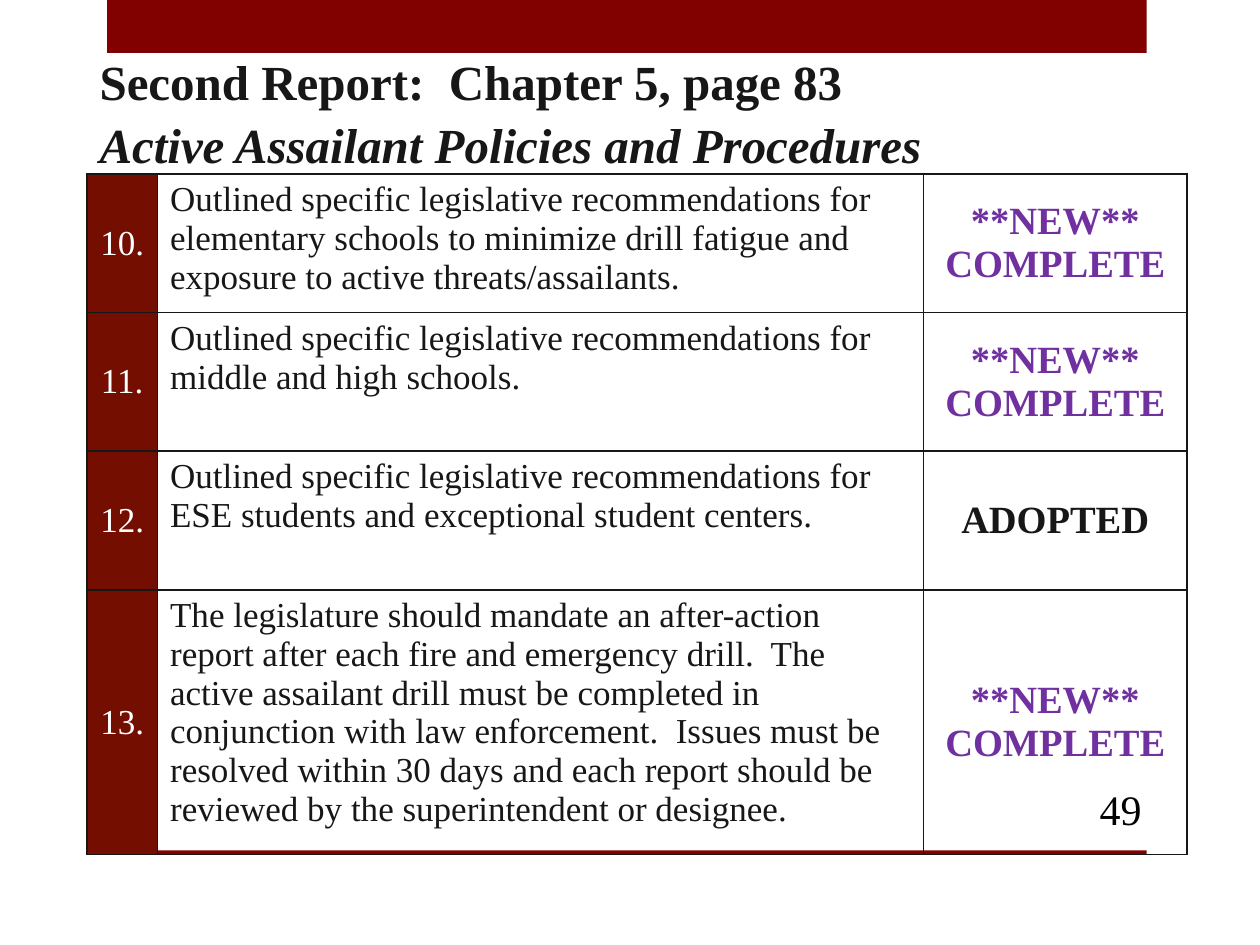
from lxml.etree import SubElement
from pptx import Presentation
from pptx.dml.color import RGBColor
from pptx.enum.shapes import MSO_SHAPE
from pptx.enum.text import MSO_ANCHOR, MSO_AUTO_SIZE, PP_ALIGN
from pptx.oxml.ns import qn
from pptx.util import Inches, Pt

# Content
TITLE_LINES = [
    ("Second Report:  Chapter 5, page 83", False),
    ("Active Assailant Policies and Procedures", True),
]
NEW = "**NEW** COMPLETE"
RECOMMENDATIONS = [
    ("10.", "Outlined specific legislative recommendations for elementary schools "
            "to minimize drill fatigue and exposure to active threats/assailants.", NEW),
    ("11.", "Outlined specific legislative recommendations for middle and high schools.", NEW),
    ("12.", "Outlined specific legislative recommendations for ESE students and "
            "exceptional student centers.", "ADOPTED"),
    ("13.", "The legislature should mandate an after-action report after each fire and "
            "emergency drill.  The active assailant drill must be completed in conjunction "
            "with law enforcement.  Issues must be resolved within 30 days and each report "
            "should be reviewed by the superintendent or designee.", NEW),
]
PAGE_NUMBER = "49"

# Theme and layout
THEME = {
    "font": "Times New Roman",
    "bar": "810000", "number_fill": "730E00", "ink": "171717",
    "white": "FFFFFF", "new": "7030A0", "page": "020202",
    "title_size": 28, "body_size": 20, "status_size": 22, "page_size": 24,
}
BARS = [(0, 0.42), (6.75, 0.03)]  # top, height
COLUMN_WIDTHS = [0.56, 6.08, 2.09]
ROW_HEIGHTS = [1.1, 1.1, 1.1, 2.1]


def color(name):
    return RGBColor.from_string(THEME[name])


def add_run(paragraph, text, size, ink, bold=False, italic=False):
    run = paragraph.add_run()
    run.text = text
    font = run.font
    font.name, font.size = THEME["font"], Pt(THEME[size])
    font.bold, font.italic = bold, italic
    font.color.rgb = color(ink)


def add_borders(cell):
    properties = cell._tc.get_or_add_tcPr()
    for index, side in enumerate(("lnL", "lnR", "lnT", "lnB")):
        line = SubElement(properties, qn(f"a:{side}"), w=str(Pt(1)))
        fill = SubElement(line, qn("a:solidFill"))
        SubElement(fill, qn("a:srgbClr"), val=THEME["ink"])
        properties.insert(index, line)  # borders precede the fill


def place(shape, left, top, width, height):
    shape.left, shape.top = Inches(left), Inches(top)
    shape.width, shape.height = Inches(width), Inches(height)


presentation = Presentation()
presentation.slide_width, presentation.slide_height = Inches(10), Inches(7.5)
slide = presentation.slides.add_slide(presentation.slide_layouts[5])

# Top and bottom bars
for top, height in BARS:
    bar = slide.shapes.add_shape(
        MSO_SHAPE.RECTANGLE, Inches(0.85), Inches(top), Inches(8.25), Inches(height))
    bar.shadow.inherit = False
    bar.fill.solid()
    bar.fill.fore_color.rgb = color("bar")
    bar.line.fill.background()

# Page number
page_box = slide.shapes.add_textbox(Inches(8.33), Inches(6.22), Inches(0.83), Inches(0.4))
page_box.text_frame.word_wrap = True
page_box.text_frame.vertical_anchor = MSO_ANCHOR.MIDDLE
page_paragraph = page_box.text_frame.paragraphs[0]
page_paragraph.alignment = PP_ALIGN.RIGHT
add_run(page_paragraph, PAGE_NUMBER, "page_size", "page")

# Title
title = slide.shapes.title
place(title, 0.69, 0.33, 8.08, 1.04)
heading = title.text_frame
heading.word_wrap = True
heading.auto_size = MSO_AUTO_SIZE.NONE
heading.vertical_anchor = MSO_ANCHOR.TOP
for index, (text, italic) in enumerate(TITLE_LINES):
    paragraph = heading.add_paragraph() if index else heading.paragraphs[0]
    paragraph.alignment = PP_ALIGN.LEFT
    paragraph.line_spacing = 1.07
    add_run(paragraph, text, "title_size", "ink", bold=True, italic=italic)

# Recommendations table
table = slide.shapes.add_table(
    len(RECOMMENDATIONS), len(COLUMN_WIDTHS), Inches(0.69), Inches(1.38),
    Inches(sum(COLUMN_WIDTHS)), Inches(sum(ROW_HEIGHTS))).table
table.first_row = table.horz_banding = False
for column, width in zip(table.columns, COLUMN_WIDTHS):
    column.width = Inches(width)
for row, height in zip(table.rows, ROW_HEIGHTS):
    row.height = Inches(height)

for row, (number, recommendation, status) in zip(table.rows, RECOMMENDATIONS):
    number_cell, text_cell, status_cell = row.cells
    for cell in row.cells:
        cell.fill.background()
    number_cell.fill.solid()
    number_cell.fill.fore_color.rgb = color("number_fill")
    for cell in (number_cell, status_cell):
        cell.vertical_anchor = MSO_ANCHOR.MIDDLE
        cell.text_frame.paragraphs[0].alignment = PP_ALIGN.CENTER
    add_run(number_cell.text_frame.paragraphs[0], number, "body_size", "white")
    add_run(text_cell.text_frame.paragraphs[0], recommendation, "body_size", "ink")
    add_run(status_cell.text_frame.paragraphs[0], status, "status_size",
            "new" if status == NEW else "ink", bold=True)
    for cell in row.cells:
        add_borders(cell)

presentation.save("out.pptx")
